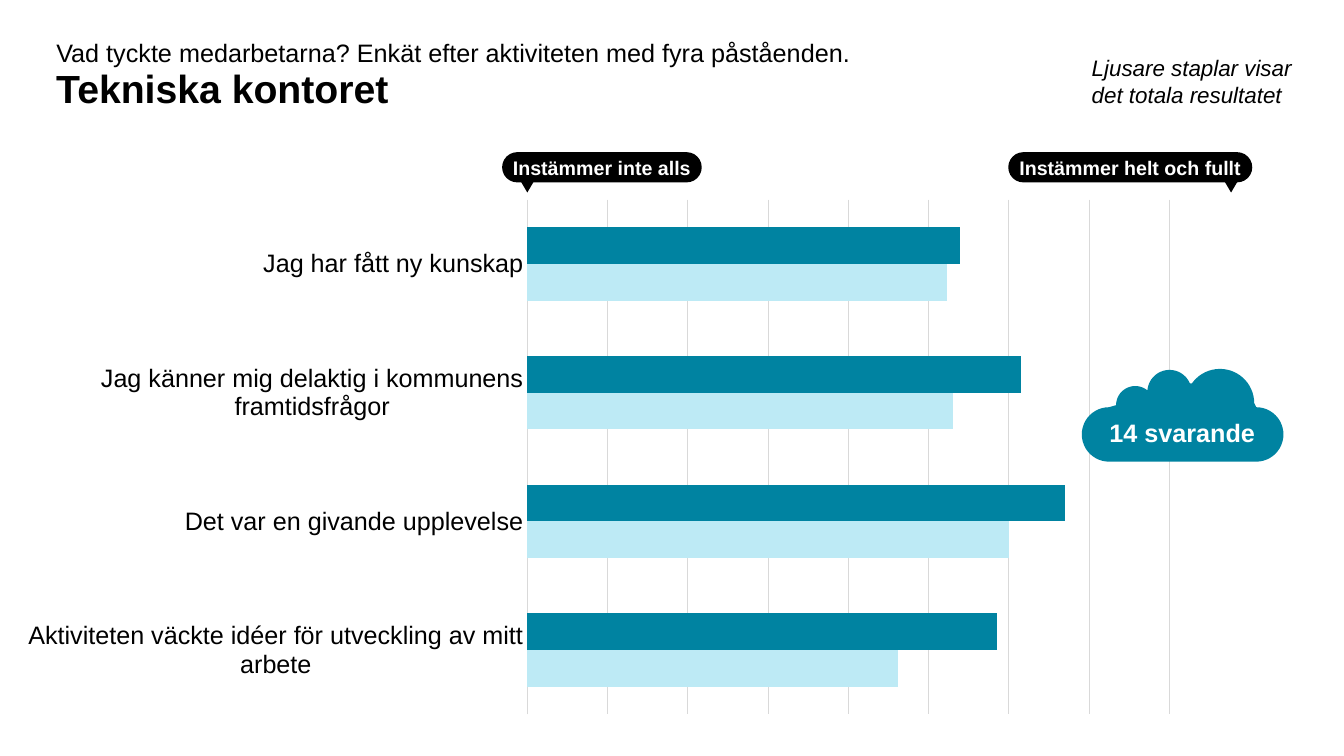
import dataclasses
import math
import typing

import lxml.etree
import pptx
import pptx.chart.data
import pptx.dml.color
import pptx.enum.chart
import pptx.enum.shapes
import pptx.enum.text
import pptx.util

Inches = pptx.util.Inches
Align = pptx.enum.text.PP_ALIGN
Anchor = pptx.enum.text.MSO_ANCHOR
Shape = pptx.enum.shapes.MSO_SHAPE

COLORS = {
    "black": "000000",
    "white": "FFFFFF",
    "teal": "0083A1",
    "pale": "BDEAF5",
    "grid": "D9D9D9",
}
STATEMENTS = [
    "Jag har fått ny kunskap",
    "Jag känner mig delaktig i kommunens framtidsfrågor",
    "Det var en givande upplevelse",
    "Aktiviteten väckte idéer för utveckling av mitt arbete",
]


@dataclasses.dataclass
class Label:
    text: str
    left: float
    top: float
    width: float
    height: float
    size: int
    color: str = "black"
    font: dict = dataclasses.field(default_factory=dict)
    paragraph: dict = dataclasses.field(default_factory=dict)
    frame: dict = dataclasses.field(default_factory=dict)


@dataclasses.dataclass
class Series:
    name: str
    values: tuple[int, ...]
    color: str


@dataclasses.dataclass
class Callout:
    text: str
    left: float
    width: float
    pointer_left: float


@dataclasses.dataclass
class Arc:
    x: float
    y: float
    radius: float
    start: int
    end: int


LABELS = [
    Label("Tekniska kontoret", 0.46, 0.58, 11.07, 0.64, 28,
          font={"bold": True}, paragraph={"line_spacing": 0.9}),
    Label("Vad tyckte medarbetarna? Enkät efter aktiviteten med fyra påståenden.",
          0.46, 0.39, 12.49, 0.27, 18),
    Label("Ljusare staplar visar det totala resultatet",
          10.73, 0.51, 2.46, 0.59, 16, font={"italic": True}),
]
RESPONDENTS = Label("14 svarande", 10.45, 4.09, 2.55, 0.4, 18, "white",
                    {"bold": True}, {"alignment": Align.CENTER})
SERIES = [
    Series("Tekniska kontoret", (83, 93, 100, 89), "teal"),
    Series("Totalt", (81, 82, 91, 73), "pale"),
]
CALLOUTS = [
    Callout("Instämmer helt och fullt", 10, 2.42, 12.11),
    Callout("Instämmer inte alls", 4.98, 1.98, 5.13),
]
CLOUD = [
    Arc(11, 4.31, 0.27, 90, 270),
    Arc(11.26, 4.02, 0.19, 180, 311),
    Arc(11.6, 3.89, 0.22, 183, 337),
    Arc(12.1, 4, 0.34, 215, 360),
    Arc(12.46, 4.31, 0.27, 270, 450),
]


def rgb(name: str) -> pptx.dml.color.RGBColor:
    return pptx.dml.color.RGBColor.from_string(COLORS[name])


def apply(target: typing.Any, values: dict) -> None:
    for name, value in values.items():
        setattr(target, name, value)


def set_font(font: typing.Any, size: int, color: str, **values: bool) -> None:
    apply(font, {"name": "Arial", "size": pptx.util.Pt(size), **values})
    font.color.rgb = rgb(color)


def set_line(line: typing.Any) -> None:
    line.color.rgb = rgb("grid")
    line.width = pptx.util.Pt(0.75)


def paint(shape: typing.Any, color: str) -> None:
    shape.shadow.inherit = False
    shape.fill.solid()
    shape.fill.fore_color.rgb = rgb(color)
    shape.line.fill.background()


def add_label(shapes: typing.Any, label: Label) -> None:
    box = shapes.add_textbox(Inches(label.left), Inches(label.top),
                             Inches(label.width), Inches(label.height))
    frame = {"word_wrap": True, "vertical_anchor": Anchor.MIDDLE, **label.frame}
    apply(box.text_frame, frame)
    para = box.text_frame.paragraphs[0]
    apply(para, label.paragraph)
    span = para.add_run()
    span.text = label.text
    set_font(span.font, label.size, label.color, **label.font)


def add_callout(page: typing.Any, callout: Callout) -> None:
    shapes = page.shapes.add_group_shape().shapes
    pill = shapes.add_shape(Shape.ROUNDED_RECTANGLE, Inches(callout.left), Inches(1.51),
                            Inches(callout.width), Inches(0.3))
    pill.adjustments[0] = 0.5
    pointer = shapes.add_shape(Shape.ISOSCELES_TRIANGLE, Inches(callout.pointer_left),
                               Inches(1.74), Inches(0.2), Inches(0.17))
    pointer.rotation = 180
    for shape in (pill, pointer):
        paint(shape, "black")
    frame = {"word_wrap": False, "vertical_anchor": Anchor.TOP,
             "auto_size": pptx.enum.text.MSO_AUTO_SIZE.SHAPE_TO_FIT_TEXT}
    add_label(shapes, Label(callout.text, callout.left, 1.5, callout.width, 0.34, 14, "white",
                            {"bold": True}, {"alignment": Align.CENTER}, frame))


def arc_points(arc: Arc, steps: int = 24) -> list[tuple[int, int]]:
    angles = [math.radians(arc.start + (arc.end - arc.start) * step / steps)
              for step in range(steps + 1)]
    return [(Inches(arc.x + arc.radius * math.cos(angle)),
             Inches(arc.y + arc.radius * math.sin(angle))) for angle in angles]


def add_cloud(page: typing.Any) -> None:
    points = [point for arc in CLOUD for point in arc_points(arc)]
    outline = page.shapes.build_freeform(*points[0])
    outline.add_line_segments(points[1:], close=True)
    paint(outline.convert_to_shape(), "teal")


def set_plot_layout(chart: typing.Any, **fractions: float) -> None:
    area = chart.element.chart.plotArea
    namespace = area.nsmap["c"]
    for layout in area.findall(f"{{{namespace}}}layout"):
        area.remove(layout)
    layout = lxml.etree.Element(f"{{{namespace}}}layout")
    manual = lxml.etree.SubElement(layout, f"{{{namespace}}}manualLayout")
    settings = {"layoutTarget": "inner", "xMode": "edge", "yMode": "edge", **fractions}
    for name, value in settings.items():
        lxml.etree.SubElement(manual, f"{{{namespace}}}{name}").set("val", str(value))
    area.insert(0, layout)


def add_survey_chart(page: typing.Any) -> None:
    survey = pptx.chart.data.CategoryChartData()
    survey.categories = STATEMENTS
    for series in SERIES:
        survey.add_series(series.name, series.values)
    chart = page.shapes.add_chart(pptx.enum.chart.XL_CHART_TYPE.BAR_CLUSTERED, Inches(0.28),
                                  Inches(1.83), Inches(12.2), Inches(5.41), survey).chart
    apply(chart, {"has_legend": False, "has_title": False})
    set_font(chart.font, 14, "black")
    apply(chart.plots[0], {"gap_width": 150, "overlap": 0, "vary_by_categories": False})
    for bars, series in zip(chart.plots[0].series, SERIES):
        bars.format.fill.solid()
        bars.format.fill.fore_color.rgb = rgb(series.color)
    no_tick = pptx.enum.chart.XL_TICK_MARK.NONE
    apply(chart.category_axis, {"reverse_order": True, "major_tick_mark": no_tick,
                                "minor_tick_mark": no_tick})
    set_font(chart.category_axis.tick_labels.font, 18, "black")
    set_line(chart.category_axis.format.line)
    apply(chart.value_axis, {"minimum_scale": 13, "maximum_scale": 127, "major_unit": 13,
                             "has_major_gridlines": True, "visible": False})
    set_line(chart.value_axis.major_gridlines.format.line)
    set_plot_layout(chart, x=0.405, y=0.028, w=0.573, h=0.944)


def main() -> None:
    deck = pptx.Presentation()
    apply(deck, {"slide_width": Inches(13.33), "slide_height": Inches(7.5)})
    page = deck.slides.add_slide(deck.slide_layouts[6])
    add_survey_chart(page)
    for label in LABELS:
        add_label(page.shapes, label)
    for callout in CALLOUTS:
        add_callout(page, callout)
    add_cloud(page)
    add_label(page.shapes, RESPONDENTS)
    deck.save("out.pptx")


if __name__ == "__main__":
    main()
